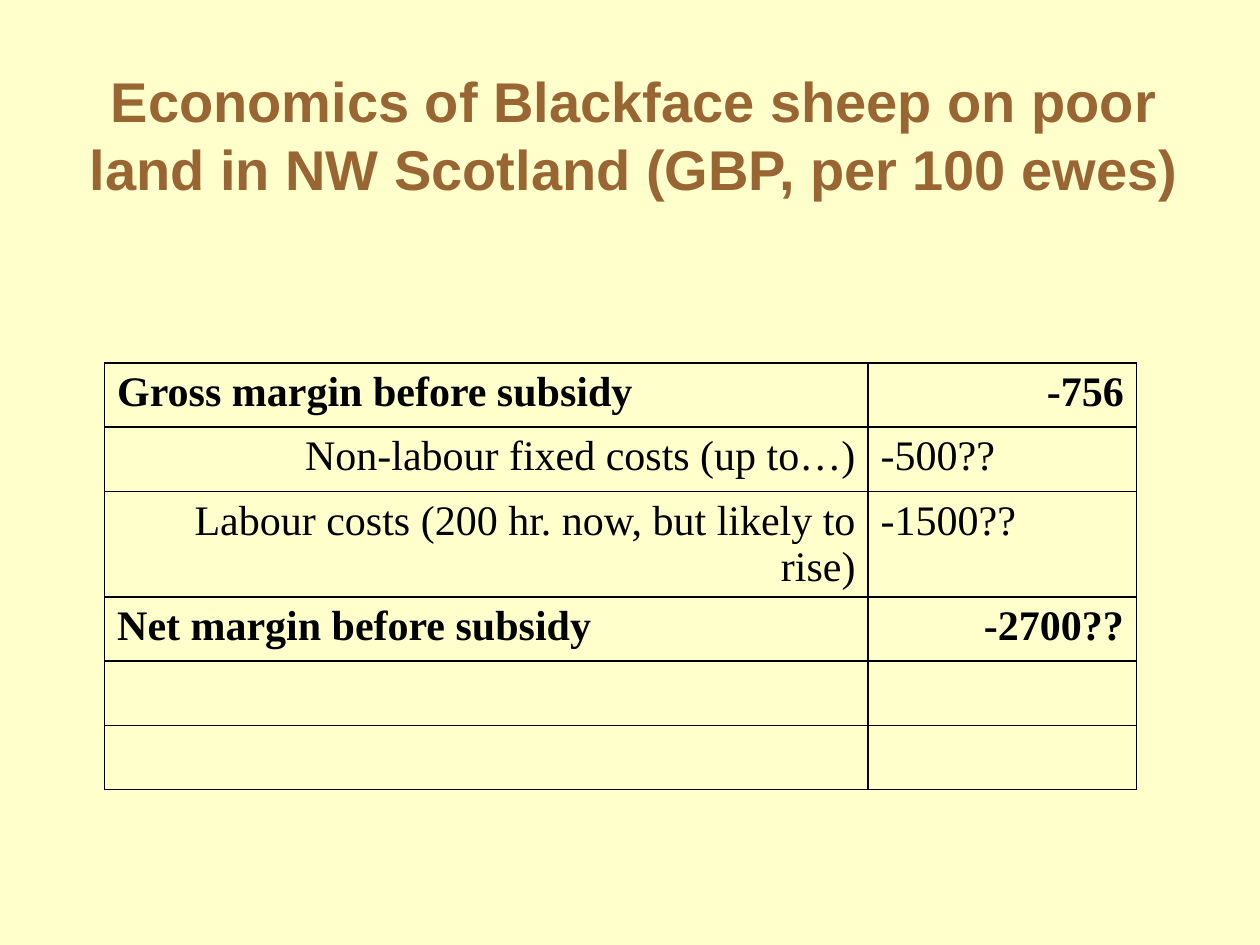
from lxml import etree
from pptx import Presentation
from pptx.dml.color import RGBColor
from pptx.enum import text
from pptx.oxml import ns
from pptx.util import Inches, Pt

TITLE = "Economics of Blackface sheep on poor land in NW Scotland (GBP, per 100 ewes)"
# label, amount, is a margin (bold, label left and amount right)
BUDGET = [
    ("Gross margin before subsidy", "-756", True),
    ("Non-labour fixed costs (up to…)", "-500??", False),
    ("Labour costs (200 hr. now, but likely to rise)", "-1500??", False),
    ("Net margin before subsidy", "-2700??", True),
    ("", "", False),
    ("", "", False),
]
COLUMN_WIDTHS = (6.06, 2.13)
ROW_HEIGHT = 0.51
BACKGROUND, BROWN, BLACK = "FFFFCC", "996633", "000000"
LEFT, CENTER, RIGHT = text.PP_ALIGN.LEFT, text.PP_ALIGN.CENTER, text.PP_ALIGN.RIGHT


def color(hex_value):
    return RGBColor.from_string(hex_value)


def write(paragraph, words, font_name, size, hex_value, bold, align):
    paragraph.alignment = align
    run = paragraph.add_run()
    run.text = words
    font = run.font
    font.name, font.size, font.bold = font_name, Pt(size), bold
    font.color.rgb = color(hex_value)


def add_borders(cell, hex_value, width):
    properties = cell._tc.get_or_add_tcPr()
    for position, side in enumerate(("lnL", "lnR", "lnT", "lnB")):
        line = etree.Element(ns.qn(f"a:{side}"), w=str(Pt(width)))
        fill = etree.SubElement(line, ns.qn("a:solidFill"))
        etree.SubElement(fill, ns.qn("a:srgbClr"), val=hex_value)
        properties.insert(position, line)


prs = Presentation()
prs.slide_width, prs.slide_height = Inches(10), Inches(7.5)
slide = prs.slides.add_slide(prs.slide_layouts[5])
slide.background.fill.solid()
slide.background.fill.fore_color.rgb = color(BACKGROUND)

title = slide.shapes.title
title.left, title.top = Inches(0.43), Inches(0.44)
title.width, title.height = Inches(9.21), Inches(1.25)
title.text_frame.vertical_anchor = text.MSO_ANCHOR.MIDDLE
write(title.text_frame.paragraphs[0], TITLE, "Arial", 32, BROWN, True, CENTER)

budget = slide.shapes.add_table(
    len(BUDGET), len(COLUMN_WIDTHS), Inches(0.83), Inches(2.88),
    Inches(sum(COLUMN_WIDTHS)), Inches(ROW_HEIGHT * len(BUDGET))).table
budget.first_row = budget.horz_banding = False
for column, width in zip(budget.columns, COLUMN_WIDTHS):
    column.width = Inches(width)

for row, (label, amount, is_margin) in enumerate(BUDGET):
    budget.rows[row].height = Inches(ROW_HEIGHT)
    aligns = (LEFT, RIGHT) if is_margin else (RIGHT, LEFT)
    for column, (words, align) in enumerate(zip((label, amount), aligns)):
        cell = budget.cell(row, column)
        cell.fill.background()
        add_borders(cell, BLACK, 1)
        if words:
            write(cell.text_frame.paragraphs[0], words, "Times New Roman", 24,
                  BLACK, is_margin, align)

prs.save("out.pptx")
